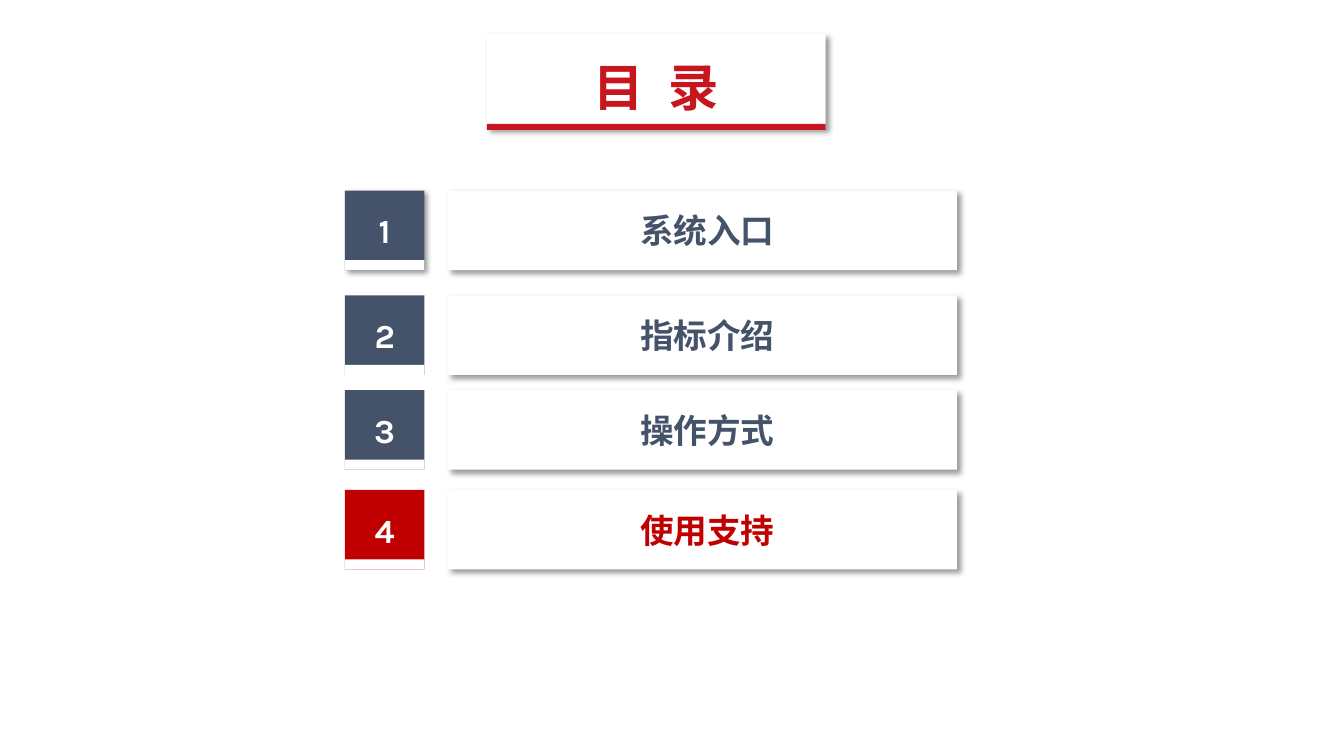
import dataclasses
import typing

import lxml.etree
import pptx
import pptx.dml.color
import pptx.enum.lang
import pptx.enum.shapes
import pptx.enum.text
import pptx.oxml.ns
import pptx.util

Inches = pptx.util.Inches
FONT = "Karla"
WHITE, SLATE, RED, TITLE_RED = "FFFFFF", "44536A", "C00000", "C8161E"

# Columns shared by the title and the agenda rows
TITLE_LEFT, TITLE_WIDTH = 4.83, 3.36
BADGE_LEFT, BADGE_SIZE, STRIP_HEIGHT = 3.42, 0.79, 0.1
LABEL_LEFT, LABEL_WIDTH = 4.44, 5.05


@dataclasses.dataclass(frozen=True)
class AgendaRow:
    top: float
    label: str
    color: str = SLATE
    badge_shadow: bool = False


ROWS = [
    AgendaRow(1.89, "系统入口", badge_shadow=True),
    AgendaRow(2.93, "指标介绍"),
    AgendaRow(3.87, "操作方式"),
    AgendaRow(4.86, "使用支持", RED),
]


def rgb(color: str) -> pptx.dml.color.RGBColor:
    return pptx.dml.color.RGBColor.from_string(color)


def add_shadow(box: typing.Any) -> None:
    """Give the box a soft shadow towards the lower right."""
    name = pptx.oxml.ns.qn
    effects = box._element.spPr.find(name("a:effectLst"))
    shadow = lxml.etree.SubElement(
        effects, name("a:outerShdw"), blurRad=str(pptx.util.Pt(4)),
        dist=str(pptx.util.Pt(3)), dir="2700000", algn="tl", rotWithShape="0")
    tint = lxml.etree.SubElement(shadow, name("a:srgbClr"), val="000000")
    lxml.etree.SubElement(tint, name("a:alpha"), val="40000")


def add_panel(shapes: typing.Any, left: float, top: float, width: float,
              height: float, fill: str, shadow: bool = False) -> typing.Any:
    box = shapes.add_shape(
        pptx.enum.shapes.MSO_SHAPE.RECTANGLE,
        Inches(left), Inches(top), Inches(width), Inches(height))
    box.fill.solid()
    box.fill.fore_color.rgb = rgb(fill)
    box.line.fill.background()
    box.shadow.inherit = False
    if shadow:
        add_shadow(box)
    return box


def add_span(para: typing.Any, text: str, size: float, color: str,
             spacing: int = 0) -> None:
    """Add a bold run; spacing is in hundredths of a point."""
    span = para.add_run()
    span.text = text
    span.font.name = FONT
    span.font.size = pptx.util.Pt(size)
    span.font.bold = True
    span.font.color.rgb = rgb(color)
    span.font.language_id = pptx.enum.lang.MSO_LANGUAGE_ID.SIMPLIFIED_CHINESE
    if spacing:
        span.font._element.set("spc", str(spacing))


def centred_paragraph(box: typing.Any) -> typing.Any:
    box.text_frame.word_wrap = True
    para = box.text_frame.paragraphs[0]
    para.alignment = pptx.enum.text.PP_ALIGN.CENTER
    return para


def write_caption(box: typing.Any, text: str, color: str) -> None:
    box.text_frame.vertical_anchor = pptx.enum.text.MSO_ANCHOR.MIDDLE
    add_span(centred_paragraph(box), text, 24, color)


def draw_title(page: typing.Any) -> None:
    group = page.shapes.add_group_shape().shapes
    add_panel(group, TITLE_LEFT, 0.34, TITLE_WIDTH, 0.94, WHITE, shadow=True)
    box = group.add_textbox(
        Inches(TITLE_LEFT), Inches(0.51), Inches(TITLE_WIDTH), Inches(0.52))
    para = centred_paragraph(box)
    box.text_frame.auto_size = pptx.enum.text.MSO_AUTO_SIZE.SHAPE_TO_FIT_TEXT
    add_span(para, "目 ", 36, TITLE_RED, spacing=450)
    add_span(para, "录", 36, TITLE_RED)
    add_panel(group, TITLE_LEFT, 1.23, TITLE_WIDTH, 0.06, TITLE_RED)


def draw_row(page: typing.Any, number: int, row: AgendaRow) -> None:
    # Numbered badge with a white strip along its foot
    group = page.shapes.add_group_shape().shapes
    badge = add_panel(group, BADGE_LEFT, row.top, BADGE_SIZE, BADGE_SIZE,
                      row.color, row.badge_shadow)
    write_caption(badge, str(number), WHITE)
    add_panel(group, BADGE_LEFT, row.top + BADGE_SIZE - STRIP_HEIGHT,
              BADGE_SIZE, STRIP_HEIGHT, WHITE)

    # Section name
    label = add_panel(page.shapes, LABEL_LEFT, row.top, LABEL_WIDTH,
                      BADGE_SIZE, WHITE, shadow=True)
    label.text_frame.margin_left = Inches(0.2)
    write_caption(label, row.label, row.color)


def main() -> None:
    deck = pptx.Presentation()
    deck.slide_width, deck.slide_height = Inches(13.33), Inches(7.5)
    page = deck.slides.add_slide(deck.slide_layouts[6])
    draw_title(page)
    for number, row in enumerate(ROWS, start=1):
        draw_row(page, number, row)
    deck.save("out.pptx")


if __name__ == "__main__":
    main()
